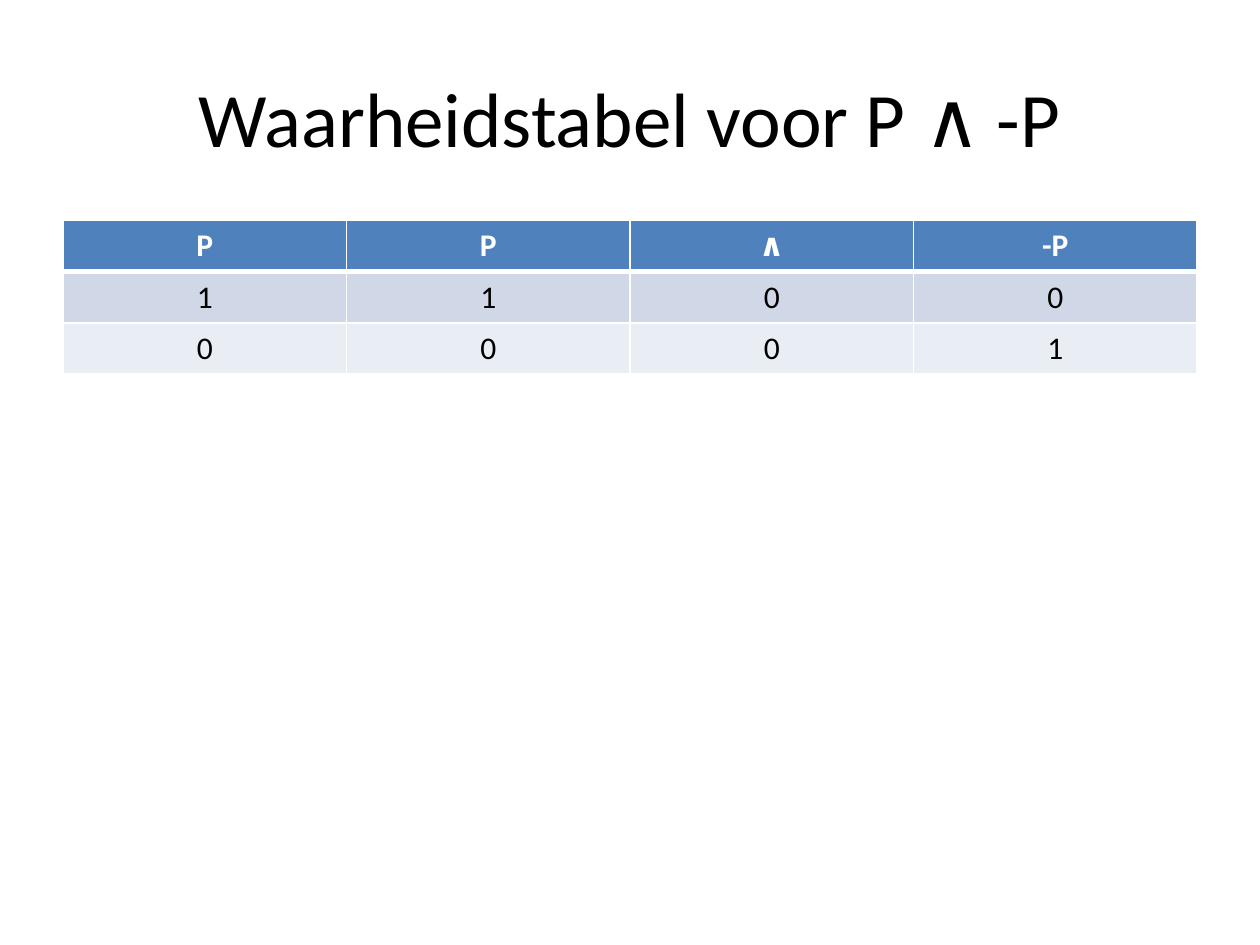
"""Build a slide with the truth table of P ∧ -P."""
from typing import NamedTuple

from pptx import Presentation
from pptx.dml.color import RGBColor as Rgb
from pptx.enum.text import MSO_ANCHOR as Anchor, PP_ALIGN as Align
from pptx.oxml import parse_xml
from pptx.oxml.ns import nsdecls
from pptx.util import Inches, Pt

COLORS = {
    "white": "FFFFFF",
    "black": "000000",
    "header": "4F81BD",
    "odd": "D0D8E8",
    "even": "E9EDF4",
}
FONT = "Calibri"


class TruthRow(NamedTuple):
    values: tuple[str, ...]
    fill: str
    ink: str = "black"
    bold: bool = False
    top: int = 1
    bottom: int = 1


ROWS = (
    TruthRow(("P", "P", "∧", "-P"), "header", "white", bold=True, bottom=3),
    TruthRow(("1", "1", "0", "0"), "odd", top=3),
    TruthRow(("0", "0", "0", "1"), "even"),
)


def style_paragraph(para, size: int, color: str, bold: bool = False) -> None:
    para.alignment = Align.CENTER
    para.font.name = FONT
    para.font.size = Pt(size)
    para.font.bold = bold
    para.font.color.rgb = Rgb.from_string(COLORS[color])


def add_borders(cell, row: TruthRow) -> None:
    properties = cell._tc.get_or_add_tcPr()
    for side, width in (("L", 1), ("R", 1), ("T", row.top), ("B", row.bottom)):
        properties.append(parse_xml(
            f'<a:ln{side} {nsdecls("a")} w="{Pt(width)}"><a:solidFill>'
            f'<a:srgbClr val="{COLORS["white"]}"/></a:solidFill></a:ln{side}>'
        ))


def fill_cell(cell, value: str, row: TruthRow) -> None:
    cell.text = value
    style_paragraph(cell.text_frame.paragraphs[0], 18, row.ink, row.bold)
    add_borders(cell, row)
    cell.fill.solid()
    cell.fill.fore_color.rgb = Rgb.from_string(COLORS[row.fill])


def add_title(slide, text: str) -> None:
    title = slide.shapes.title
    title.left, title.top = Inches(0.5), Inches(0.3)
    title.width, title.height = Inches(9), Inches(1.25)
    title.text_frame.text = text
    title.text_frame.vertical_anchor = Anchor.MIDDLE
    style_paragraph(title.text_frame.paragraphs[0], 44, "black")


def add_truth_table(slide, rows: tuple[TruthRow, ...]) -> None:
    table = slide.shapes.add_table(
        len(rows), len(rows[0].values),
        Inches(0.5), Inches(1.75), Inches(9), Inches(1.22),
    ).table
    for row_index, row in enumerate(rows):
        for column_index, value in enumerate(row.values):
            fill_cell(table.cell(row_index, column_index), value, row)


def main() -> None:
    deck = Presentation()
    deck.slide_width, deck.slide_height = Inches(10), Inches(7.5)
    page = deck.slides.add_slide(deck.slide_layouts.get_by_name("Title Only"))
    add_title(page, "Waarheidstabel voor P ∧ -P")
    add_truth_table(page, ROWS)
    deck.save("out.pptx")


if __name__ == "__main__":
    main()
